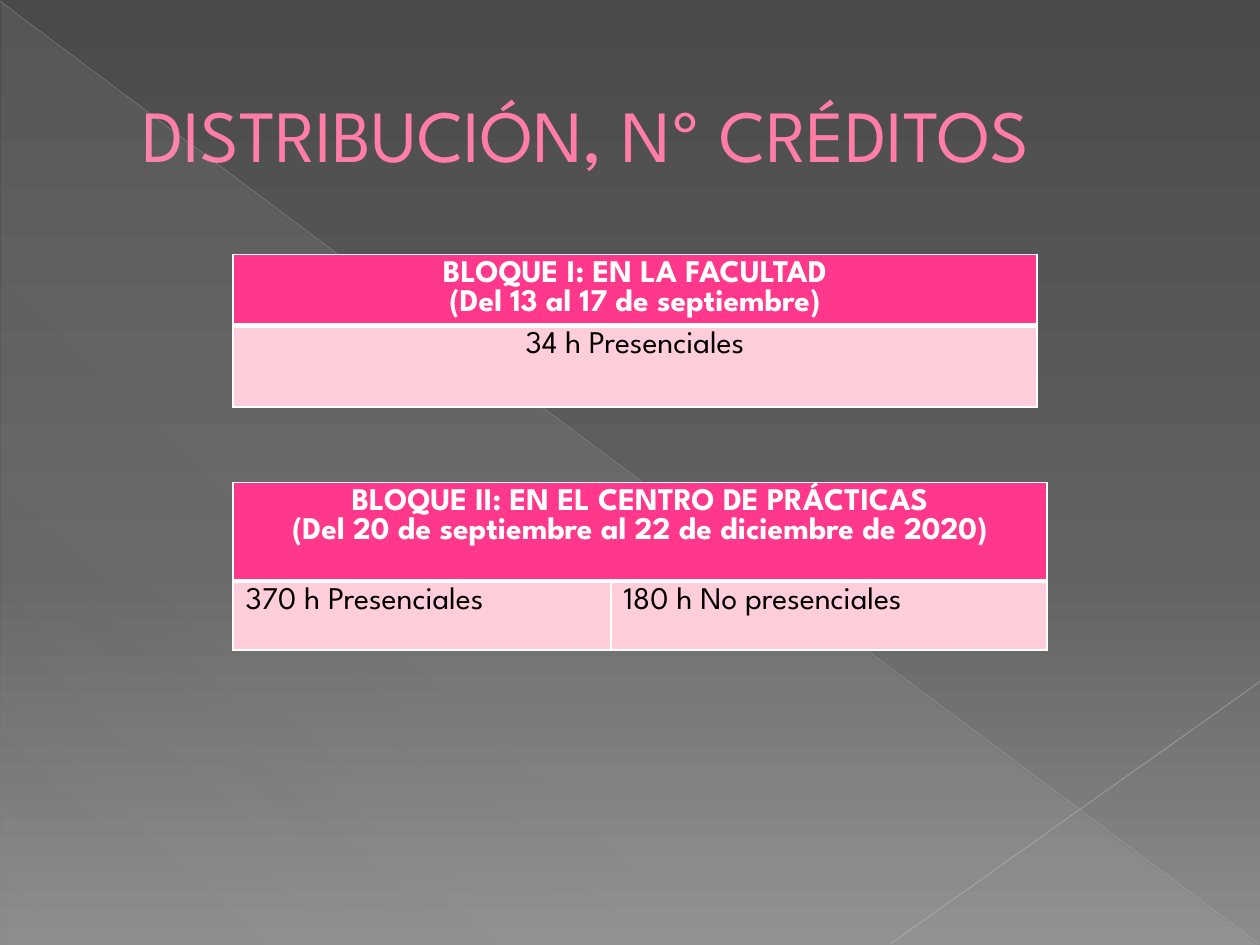
from lxml import etree
from pptx import Presentation
from pptx import util as u
from pptx.dml.color import RGBColor
from pptx.enum import shapes, text
from pptx.oxml import parse_xml
from pptx.oxml.ns import nsdecls, qn

FONT = "League Spartan"
PINK, PALE, WHITE, BLACK = "FF388C", "FFCEDA", "FFFFFF", "000000"
TITLE = "DISTRIBUCIÓN, Nº CRÉDITOS"
BACKDROP = [(0, "4A4A4A", 100), (60, "626262", 100), (100, "8C8C8C", 100)]
SHEEN = [(0, "D2D2D2", 10), (70, "D2D2D2", 8), (100, "D2D2D2", 1)]
# from, to, colour, width in points, opacity in percent
RAYS = [
    ((0, 0.01), (9.99, 7.49), "BFBFBF", 0.39, 35),
    ((10, 5.41), (7.07, 7.49), "C6C6C6", 0.47, 45),
]
TABLE_LEFT = 1.85
BLOCKS = [
    {"top": 2.02, "columns": [6.38], "rows": [0.55, 0.65],
     "head": ["BLOQUE I: EN LA FACULTAD", "(Del 13 al 17 de septiembre)"],
     "hours": ["34 h Presenciales"], "align": text.PP_ALIGN.CENTER},
    {"top": 3.83, "columns": [3, 3.46], "rows": [0.78, 0.55],
     "head": ["BLOQUE II: EN EL CENTRO DE PRÁCTICAS",
              "(Del 20 de septiembre al 22 de diciembre de 2020)"],
     "hours": ["370 h Presenciales", "180 h No presenciales"],
     "align": text.PP_ALIGN.LEFT},
]


def rgb(value):
    return RGBColor.from_string(value)


def set_gradient(fill, element, stops, angle):
    """Give the fill any number of (position, colour, opacity) stops."""
    fill.gradient()
    old = element.find(".//" + qn("a:gradFill"))
    marks = "".join(
        f'<a:gs pos="{pos * 1000}"><a:srgbClr val="{color}">'
        f'<a:alpha val="{opacity * 1000}"/></a:srgbClr></a:gs>'
        for pos, color, opacity in stops)
    old.getparent().replace(old, parse_xml(
        f'<a:gradFill {nsdecls("a")} rotWithShape="1"><a:gsLst>{marks}</a:gsLst>'
        f'<a:lin ang="{angle * 60000}" scaled="0"/></a:gradFill>'))


def line_xml(tag, color, points):
    return parse_xml(
        f'<a:{tag} {nsdecls("a")} w="{u.Pt(points)}"><a:solidFill>'
        f'<a:srgbClr val="{color}"/></a:solidFill></a:{tag}>')


def add_span(para, words, size, color, bold=False):
    span = para.add_run()
    span.text = words
    span.font.name, span.font.size, span.font.bold = FONT, u.Pt(size), bold
    span.font.color.rgb = rgb(color)
    return span


def add_ray(page, start, end, color, width, opacity):
    ray = page.shapes.add_connector(
        shapes.MSO_CONNECTOR.STRAIGHT, *map(u.Inches, start + end))
    ray.line.width = u.Pt(width)
    ray.line.color.rgb = rgb(color)
    properties = ray._element.spPr
    shade = properties.find(".//" + qn("a:srgbClr"))
    etree.SubElement(shade, qn("a:alpha"), val=str(opacity * 1000))
    etree.SubElement(properties, qn("a:effectLst"))


def fill_cell(cell, lines, fill, color, bold, align, bottom):
    cell.fill.solid()
    cell.fill.fore_color.rgb = rgb(fill)
    borders = {"lnL": 1, "lnR": 1, "lnT": 1, "lnB": bottom}
    for place, (side, points) in enumerate(borders.items()):
        cell._tc.tcPr.insert(place, line_xml(side, WHITE, points))
    frame = cell.text_frame
    for number, words in enumerate(lines):
        para = frame.add_paragraph() if number else frame.paragraphs[0]
        para.alignment = align
        add_span(para, words, 18, color, bold)


def add_block(page, block):
    columns, rows = block["columns"], block["rows"]
    table = page.shapes.add_table(
        len(rows), len(columns), u.Inches(TABLE_LEFT), u.Inches(block["top"]),
        u.Inches(sum(columns)), u.Inches(sum(rows))).table
    table.first_row = table.horz_banding = False
    for column, width in zip(table.columns, columns):
        column.width = u.Inches(width)
    for row, height in zip(table.rows, rows):
        row.height = u.Inches(height)
    head = table.cell(0, 0)
    if len(columns) > 1:
        head.merge(table.cell(0, len(columns) - 1))
    fill_cell(head, block["head"], PINK, WHITE, True, text.PP_ALIGN.CENTER, 3)
    for number, hours in enumerate(block["hours"]):
        fill_cell(table.cell(1, number), [hours], PALE, BLACK, False, block["align"], 1)


def add_title(page):
    title = page.shapes.title
    title.left, title.top, title.width, title.height = map(
        u.Inches, (0.5, 0.29, 9, 1.53))
    title.text_frame.vertical_anchor = text.MSO_ANCHOR.MIDDLE
    para = title.text_frame.paragraphs[0]
    para.alignment = text.PP_ALIGN.LEFT
    para._p.get_or_add_pPr().set("marL", str(u.Inches(0.53)))
    span = add_span(para, TITLE, 42, "FF7DA7")
    span.font._element.insert(0, line_xml("ln", "B12761", 0.5))


def main():
    deck = Presentation()
    deck.slide_width, deck.slide_height = u.Inches(10), u.Inches(7.5)
    page = deck.slides.add_slide(deck.slide_layouts.get_by_name("Title Only"))
    set_gradient(page.background.fill, page._element, BACKDROP, 90)
    sheen = page.shapes.add_shape(
        shapes.MSO_SHAPE.RIGHT_TRIANGLE, *map(u.Inches, (0.01, 0.02, 9.98, 7.48)))
    sheen.shadow.inherit = False
    sheen.line.fill.background()
    set_gradient(sheen.fill, sheen._element, SHEEN, 133)
    for ray in RAYS:
        add_ray(page, *ray)
    add_title(page)
    for block in BLOCKS:
        add_block(page, block)
    deck.save("out.pptx")


if __name__ == "__main__":
    main()
